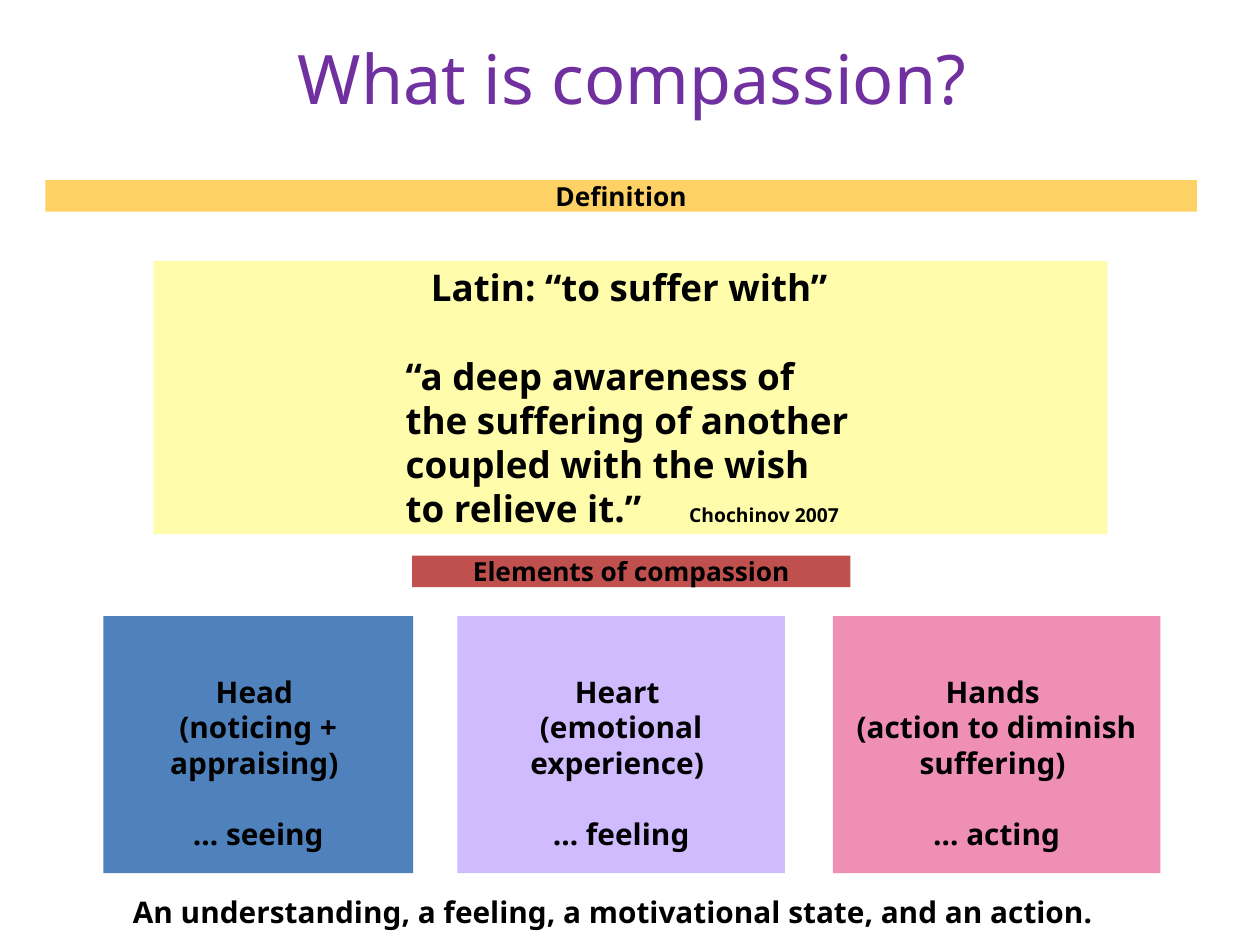
from lxml.etree import SubElement
from pptx import Presentation
from pptx.dml.color import RGBColor
from pptx.enum.shapes import MSO_SHAPE as Shape
from pptx.enum.text import MSO_ANCHOR as Anchor, MSO_AUTO_SIZE as AutoSize, PP_ALIGN as Align
from pptx.oxml.ns import qn
from pptx.util import Inches, Pt

BLACK = RGBColor(0x00, 0x00, 0x00)
PURPLE = RGBColor(0x70, 0x30, 0xA0)
GOLD = RGBColor(0xFE, 0xD1, 0x64)
CREAM = RGBColor(0xFF, 0xFC, 0xAB)
RED = RGBColor(0xC0, 0x50, 0x4D)
BLUE = RGBColor(0x4F, 0x81, 0xBD)
LILAC = RGBColor(0xCF, 0xBB, 0xFE)
PINK = RGBColor(0xEF, 0x8F, 0xB3)

FONT = "Noto Sans"
CARD_SIZE, QUOTE_SIZE = 17, 21
LINE_PITCH = 1.2

TITLE = "What is compassion?"
BANNERS = [
    ("Definition", GOLD, (0.36, 1.43, 9.14, 0.25)),
    ("Elements of compassion", RED, (3.27, 4.41, 3.48, 0.25)),
]
LATIN = "Latin: “to suffer with”"
QUOTE = [
    "“a deep awareness of",
    "the suffering of another",
    "coupled with the wish",
    "to relieve it.”",
]
CITATION = "Chochinov 2007"
CARDS = [
    ("Head ", "(noticing + appraising) ", "… seeing", BLUE, 0.82, 2.46),
    ("Heart ", "(emotional experience) ", "… feeling", LILAC, 3.63, 2.6),
    ("Hands ", "(action to diminish suffering) ", "… acting", PINK, 6.61, 2.6),
]
CARD_TOP, CARD_HEIGHT = 4.89, 2.04
SUMMARY = "An understanding, a feeling, a motivational state, and an action."


def set_frame(frame, anchor=Anchor.MIDDLE, **margins):
    frame.word_wrap = True
    frame.auto_size = AutoSize.NONE
    frame.vertical_anchor = anchor
    for side in ("left", "top", "right", "bottom"):
        setattr(frame, f"margin_{side}", Inches(margins.get(side, 0)))


def add_run(paragraph, text, size, color=BLACK, bold=True):
    run = paragraph.add_run()
    run.text = text
    for name, value in {"name": FONT, "size": Pt(size), "bold": bold}.items():
        setattr(run.font, name, value)
    run.font.color.rgb = color


def write_lines(frame, lines, size, align, gap_before=None):
    pitch = Pt(size * LINE_PITCH)
    for index, text in enumerate(lines):
        paragraph = frame.add_paragraph() if index else frame.paragraphs[0]
        paragraph.alignment = align
        if len(lines) > 1:
            paragraph.line_spacing = pitch
        if index == gap_before:
            paragraph.space_before = pitch
        add_run(paragraph, text, size)


def add_box(slide, place, color):
    shape = slide.shapes.add_shape(Shape.RECTANGLE, *map(Inches, place))
    shape.shadow.inherit = False
    shape.fill.solid()
    shape.fill.fore_color.rgb = color
    shape.line.fill.background()
    return shape.text_frame


def add_title(slide):
    title = slide.shapes.title
    for name, value in zip(("left", "top", "width", "height"), (0.5, 0.26, 9.03, 1.03)):
        setattr(title, name, Inches(value))
    set_frame(title.text_frame, Anchor.TOP, left=0.03, top=0.03, right=0.03, bottom=0.03)
    paragraph = title.text_frame.paragraphs[0]
    paragraph.alignment = Align.CENTER
    add_run(paragraph, TITLE, 39, PURPLE, False)


def add_quote(slide):
    frame = add_box(slide, (1.22, 2.07, 7.57, 2.17), CREAM)
    set_frame(frame, left=2)
    write_lines(frame, [LATIN, *QUOTE], QUOTE_SIZE, Align.LEFT, gap_before=1)
    latin_properties = frame.paragraphs[0]._p.get_or_add_pPr()
    latin_properties.set("marL", str(Inches(0.2)))
    last = frame.paragraphs[-1]
    tabs = SubElement(last._p.get_or_add_pPr(), qn("a:tabLst"))
    SubElement(tabs, qn("a:tab"), pos=str(Inches(2.25)), algn="l")
    add_run(last, "\t" + CITATION, 11)


def main():
    presentation = Presentation()
    presentation.slide_width, presentation.slide_height = Inches(10), Inches(7.5)
    slide = presentation.slides.add_slide(presentation.slide_layouts[5])
    add_title(slide)

    for text, color, place in BANNERS:
        frame = add_box(slide, place, color)
        set_frame(frame)
        write_lines(frame, [text], 15, Align.CENTER)

    add_quote(slide)

    for *lines, color, left, width in CARDS:
        frame = add_box(slide, (left, CARD_TOP, width, CARD_HEIGHT), color)
        set_frame(frame, top=CARD_SIZE * LINE_PITCH / 72)
        write_lines(frame, lines, CARD_SIZE, Align.CENTER, gap_before=2)

    summary = slide.shapes.add_textbox(*map(Inches, (0.2, 7.06, 9.33, 0.33)))
    set_frame(summary.text_frame, Anchor.TOP, left=0.03, top=0.03, right=0.03, bottom=0.03)
    write_lines(summary.text_frame, [SUMMARY], CARD_SIZE, Align.CENTER)

    presentation.save("out.pptx")


if __name__ == "__main__":
    main()
